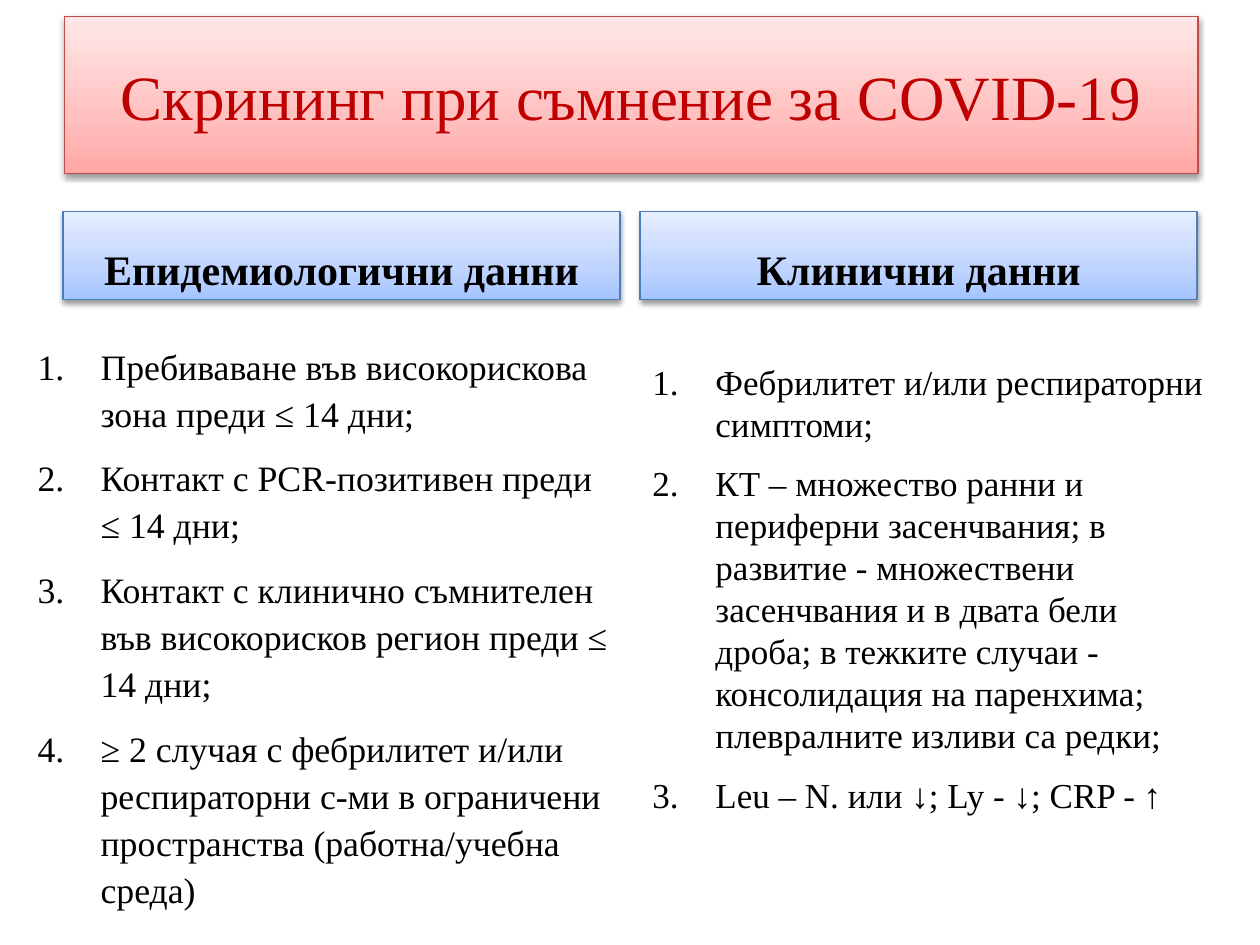
from copy import deepcopy
from lxml.etree import SubElement
from pptx import Presentation
from pptx.dml.color import RGBColor
from pptx.enum.shapes import MSO_SHAPE
from pptx.enum.text import MSO_ANCHOR, PP_ALIGN
from pptx.oxml.ns import qn
from pptx.util import Inches, Pt

deck = Presentation()
deck.slide_width, deck.slide_height = Inches(10), Inches(7.5)
slide = deck.slides.add_slide(deck.slide_layouts[6])


def write(shape, lines, size, color="000000", bold=False, anchor=MSO_ANCHOR.TOP,
          align=PP_ALIGN.LEFT, pitch=None, before=0, after=0, numbered=False):
    frame = shape.text_frame
    frame.word_wrap = True
    frame.vertical_anchor = anchor
    frame.text = "\n".join(lines)
    for para in frame.paragraphs:
        para.alignment = align
        para.line_spacing = pitch
        para.space_before, para.space_after = Pt(before), Pt(after)
        font = para.runs[0].font
        font.name, font.size, font.bold = "Times New Roman", Pt(size), bold
        font.color.rgb = RGBColor.from_string(color)
        if numbered:
            props = para._p.get_or_add_pPr()
            props.set("marL", str(Inches(0.5)))
            props.set("indent", str(-Inches(0.5)))
            SubElement(props, qn("a:buFont"), typeface="+mj-lt")
            SubElement(props, qn("a:buAutoNum"), type="arabicPeriod")


def banner(left, top, width, height, shades, edge):
    """Add a box with an upward three-stop gradient and a soft shadow."""
    box = slide.shapes.add_shape(MSO_SHAPE.RECTANGLE, Inches(left), Inches(top),
                                 Inches(width), Inches(height))
    box.fill.gradient()
    box.fill.gradient_angle = 90
    stops = box.element.spPr.find(qn("a:gradFill")).find(qn("a:gsLst"))
    stops.append(deepcopy(stops[0]))
    for stop, spot, shade in zip(box.fill.gradient_stops, (0, 0.35, 1), shades):
        stop.position = spot
        stop.color.rgb = RGBColor.from_string(shade)
    box.line.color.rgb = RGBColor.from_string(edge)
    box.line.width = Pt(0.75)
    box.shadow.inherit = False
    effects = box.element.spPr.find(qn("a:effectLst"))
    shade = SubElement(effects, qn("a:outerShdw"), blurRad=str(Pt(3.1)),
                       dist=str(Pt(1.6)), dir="5400000", rotWithShape="0")
    tint = SubElement(shade, qn("a:srgbClr"), val="000000")
    SubElement(tint, qn("a:alpha"), val="38000")
    return box


title = banner(0.51, 0.13, 9, 1.25, ("FFA6A5", "FFC0BF", "FFE7E7"), "BF4C48")
write(title, ["Скрининг при съмнение за COVID-19"], 36, color="C00000",
      anchor=MSO_ANCHOR.MIDDLE, align=PP_ALIGN.CENTER)

# Each column: heading, list box, text size, line pitch, list items
columns = [
    ("Епидемиологични данни", (0.2, 2.65, 4.72, 4.72), 20.4, 1.1, [
        "Пребиваване във високорискова зона преди ≤ 14 дни;",
        "Контакт с PCR-позитивен преди ≤ 14 дни;",
        "Контакт с клинично съмнителен във високорисков регион преди ≤ 14 дни;",
        "≥ 2 случая с фебрилитет и/или респираторни с-ми в ограничени "
        "пространства (работна/учебна среда)",
    ]),
    ("Клинични данни", (5.08, 2.81, 4.65, 4.84), 20, None, [
        "Фебрилитет и/или респираторни симптоми;",
        "КТ – множество ранни и периферни засенчвания; в развитие - "
        "множествени засенчвания и в двата бели дроба; в тежките случаи - "
        "консолидация на паренхима; плевралните изливи са редки;",
        "Leu – N. или ↓; Ly - ↓; CRP - ↑",
    ]),
]
width, gap = 4.42, 0.16
for col, (heading, area, size, pitch, items) in enumerate(columns):
    head = banner(0.5 + col * (width + gap), 1.68, width, 0.7,
                  ("A4C4FF", "BFD4FF", "E6EEFF"), "4B7EBC")
    write(head, [heading], 24, bold=True, before=4.8,
          anchor=MSO_ANCHOR.BOTTOM, align=PP_ALIGN.CENTER)
    body = slide.shapes.add_textbox(*map(Inches, area))
    write(body, items, size, pitch=pitch, after=10, numbered=True)

deck.save("out.pptx")
